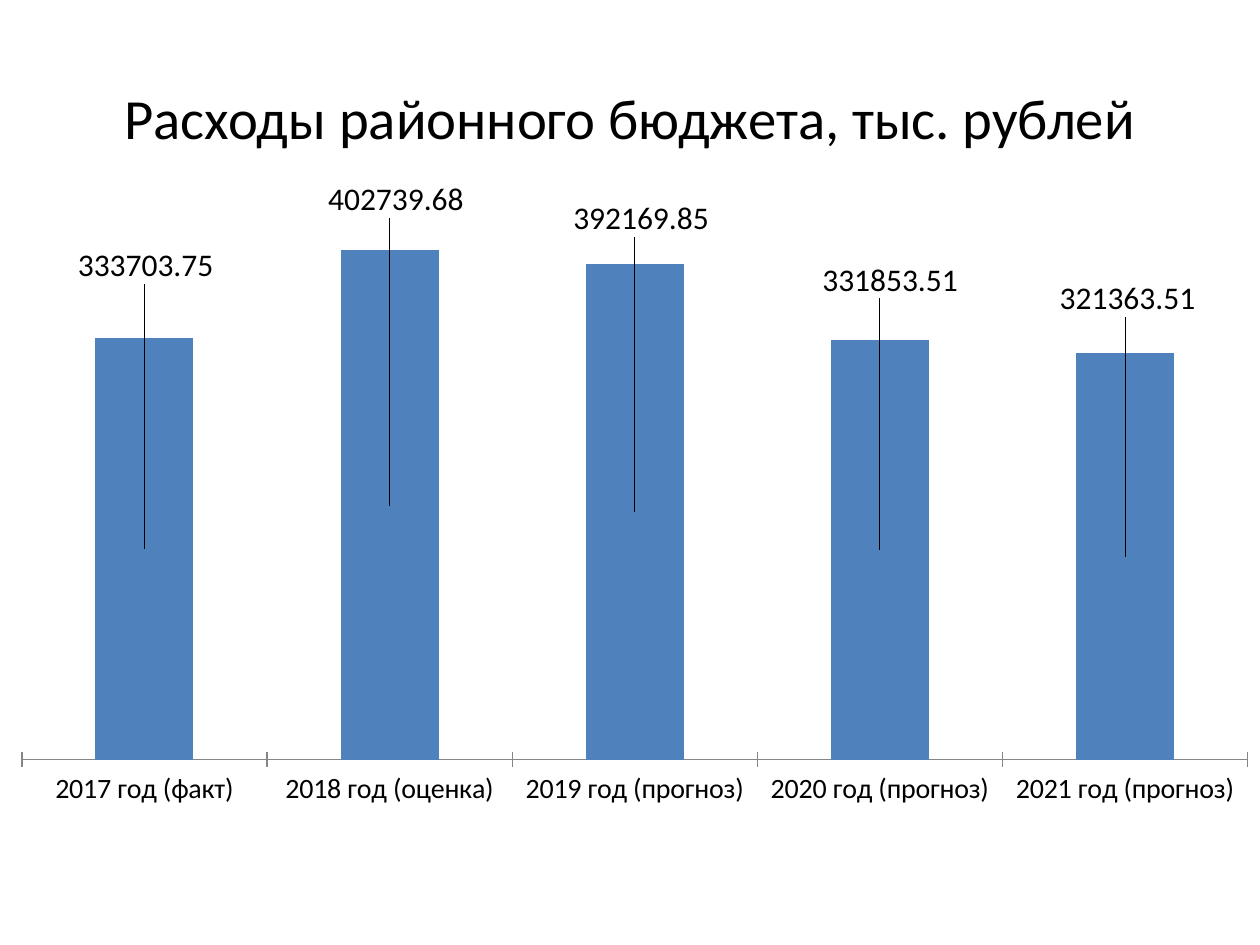
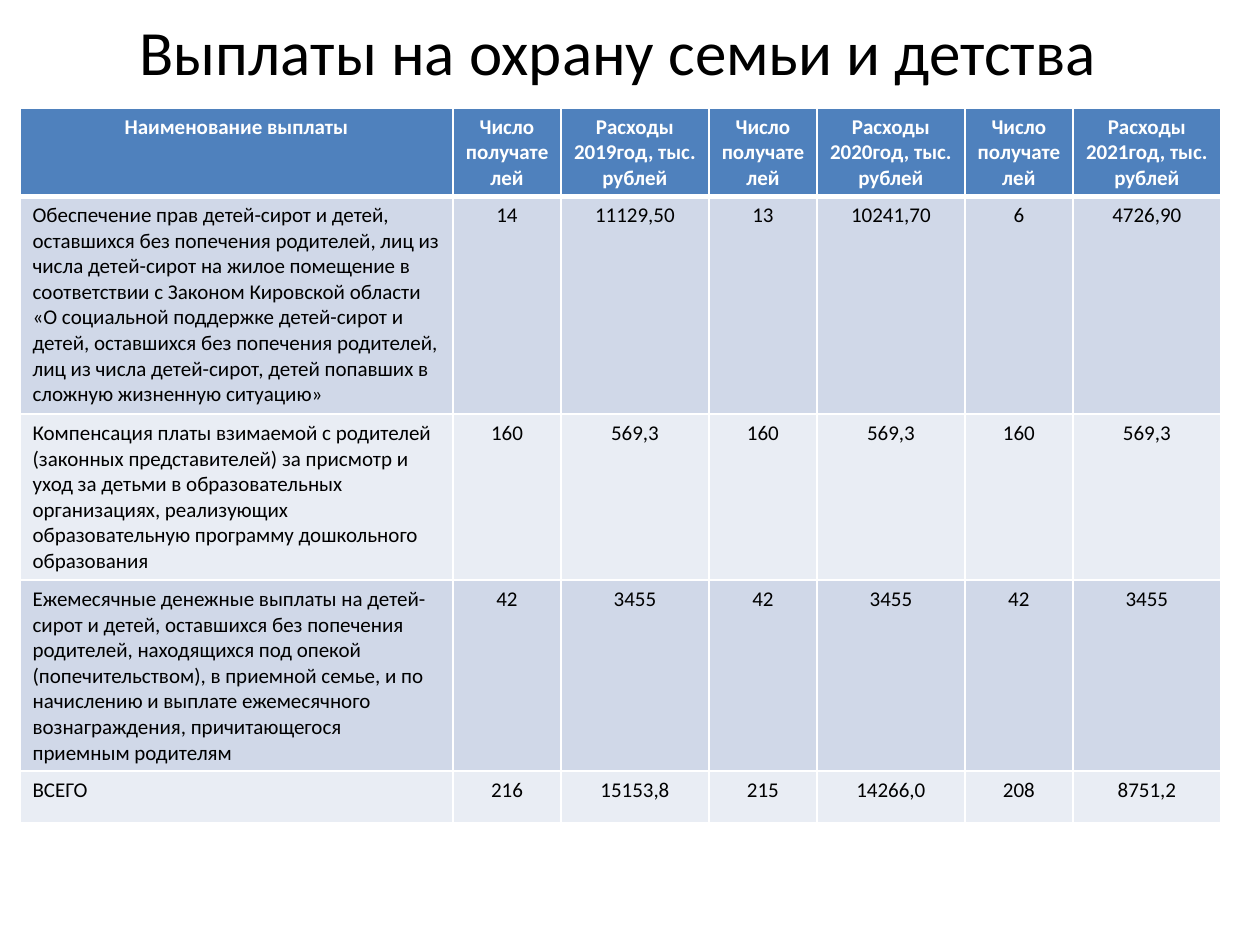
"""Two budget slides: spending by year as a column chart, and family payments as a table."""
from lxml.etree import SubElement
from pptx import Presentation
from pptx.chart.data import CategoryChartData
from pptx.dml.color import RGBColor
from pptx.enum.chart import XL_CHART_TYPE as ChartType, XL_LABEL_POSITION as LabelPos
from pptx.enum.chart import XL_TICK_LABEL_POSITION as TickLabels, XL_TICK_MARK as TickMark
from pptx.enum.text import MSO_ANCHOR as Anchor, PP_ALIGN as Align
from pptx.oxml import parse_xml
from pptx.oxml.ns import nsdecls, qn
from pptx.util import Emu, Pt

FONT = "Calibri"
COLORS = {"text": "000000", "paper": "FFFFFF", "accent": "4F81BD",
          "band_dark": "D0D8E8", "band_light": "E9EDF4", "axis": "868686"}
SLIDE = (1260, 945)

SPENDING_TITLE = ("Расходы районного бюджета, тыс. рублей", (63, 38, 1134, 158), 32.4)
SPENDING_BOX = (0, 147, 1289, 767)
SPENDING_PLOT = {"x": 0.017, "y": 0.057, "w": 0.951, "h": 0.742}
# year, amount, label shift from the middle of its column in px
SPENDING = [
    ("2017 год (факт)", 333703.75, (1, -283)),
    ("2018 год (оценка)", 402739.68, (7, -306)),
    ("2019 год (прогноз)", 392169.85, (7, -293)),
    ("2020 год (прогноз)", 331853.51, (10, -270)),
    ("2021 год (прогноз)", 321363.51, (2, -258)),
]

PAYMENTS_TITLE = ("Выплаты на охрану семьи и детства", (39, 0, 1158, 100), 36)
PAYMENTS_ORIGIN = (20, 108)
PAYMENTS_COLUMNS = [433] + [108, 148] * 3
PAYMENTS_ROWS = [88, 218, 166, 191, 52]
HEADER = ["Наименование выплаты"]
for year in (2019, 2020, 2021):
    HEADER += ["Число получателей", f"Расходы {year}год, тыс. рублей"]
PAYMENTS = [
    HEADER,
    ["Обеспечение прав детей-сирот и детей, оставшихся без попечения родителей, лиц из числа "
     "детей-сирот на жилое помещение в соответствии с Законом Кировской области «О социальной "
     "поддержке детей-сирот и детей, оставшихся без попечения родителей, лиц из числа "
     "детей-сирот, детей попавших в сложную жизненную ситуацию»",
     "14", "11129,50", "13", "10241,70", "6", "4726,90"],
    ["Компенсация платы взимаемой с родителей (законных представителей) за присмотр и уход за "
     "детьми в образовательных организациях, реализующих образовательную программу "
     "дошкольного образования"] + ["160", "569,3"] * 3,
    ["Ежемесячные денежные выплаты на детей-сирот и детей, оставшихся без попечения родителей, "
     "находящихся под опекой (попечительством), в приемной семье, и по начислению и выплате "
     "ежемесячного вознаграждения, причитающегося приемным родителям"] + ["42", "3455"] * 3,
    ["ВСЕГО", "216", "15153,8", "215", "14266,0", "208", "8751,2"],
]


def px(length):
    return Emu(round(length * 914400 / 126))


def rgb(name):
    return RGBColor.from_string(COLORS[name])


def style_font(font, size, color="text", bold=False):
    font.name, font.size, font.bold = FONT, Pt(size), bold
    font.color.rgb = rgb(color)


def add_title(slide, words, box, size):
    frame = slide.shapes.add_textbox(*map(px, box)).text_frame
    frame.word_wrap = True
    frame.vertical_anchor = Anchor.MIDDLE
    frame.text = words
    heading = frame.paragraphs[0]
    heading.alignment = Align.CENTER
    style_font(heading.runs[0].font, size)


def manual_layout(places, inner=False):
    tags = '<c:layoutTarget val="inner"/>' if inner else ""
    if inner:
        tags += '<c:xMode val="edge"/><c:yMode val="edge"/>'
    tags += "".join(f'<c:{key} val="{value:.3f}"/>' for key, value in places.items())
    return parse_xml(f'<c:layout {nsdecls("c")}><c:manualLayout>{tags}</c:manualLayout></c:layout>')


def add_spending_chart(slide):
    years, amounts, shifts = zip(*SPENDING)
    spending = CategoryChartData()
    spending.categories = years
    spending.add_series("Series 1", amounts)
    chart = slide.shapes.add_chart(
        ChartType.COLUMN_STACKED, *map(px, SPENDING_BOX), spending).chart
    chart.has_legend = chart.has_title = False
    style_font(chart.font, 18)

    amount_axis, year_axis = chart.value_axis, chart.category_axis
    amount_axis.minimum_scale, amount_axis.maximum_scale = 0, 450000
    amount_axis.has_major_gridlines = False
    amount_axis.visible = False
    year_axis.major_tick_mark = TickMark.CROSS
    year_axis.tick_label_position = TickLabels.NEXT_TO_AXIS
    year_axis.format.line.color.rgb = rgb("axis")
    style_font(year_axis.tick_labels.font, 16)

    plot = chart.plots[0]
    plot.gap_width, plot.overlap, plot.vary_by_categories = 150, 100, False
    columns = plot.series[0]
    columns.format.fill.solid()
    columns.format.fill.fore_color.rgb = rgb("accent")
    columns.data_labels.show_value = True
    style_font(columns.data_labels.font, 18)
    for index in range(len(years)):
        label = columns.points[index].data_label
        label.position = LabelPos.CENTER
        style_font(label.font, 18)
    for label, (right, down) in zip(columns.data_labels._element.findall(qn("c:dLbl")), shifts):
        shift = {"x": right / SPENDING_BOX[2], "y": down / SPENDING_BOX[3]}
        label.find(qn("c:idx")).addnext(manual_layout(shift))

    area = chart._chartSpace.chart.plotArea
    for layout in area.findall(qn("c:layout")):
        area.remove(layout)
    area.insert(0, manual_layout(SPENDING_PLOT, inner=True))


def add_borders(cell, widths):
    properties = cell._tc.get_or_add_tcPr()
    for place, (side, width) in enumerate(widths.items()):
        border = parse_xml(
            f'<a:{side} {nsdecls("a")} w="{Pt(width)}"><a:solidFill/></a:{side}>')
        SubElement(border[0], qn("a:srgbClr")).set("val", COLORS["paper"])
        properties.insert(place, border)


def add_payments_table(slide):
    size = (sum(PAYMENTS_COLUMNS), sum(PAYMENTS_ROWS))
    table = slide.shapes.add_table(
        len(PAYMENTS_ROWS), len(PAYMENTS_COLUMNS), *map(px, PAYMENTS_ORIGIN + size)).table
    for column, width in zip(table.columns, PAYMENTS_COLUMNS):
        column.width = px(width)
    for row, height in zip(table.rows, PAYMENTS_ROWS):
        row.height = px(height)
    for r, payment in enumerate(PAYMENTS):
        is_header = r == 0
        band = "accent" if is_header else "band_dark" if r % 2 else "band_light"
        for c, words in enumerate(payment):
            cell = table.cell(r, c)
            cell.fill.solid()
            cell.fill.fore_color.rgb = rgb(band)
            cell.text_frame.text = words
            entry = cell.text_frame.paragraphs[0]
            entry.alignment = Align.CENTER if is_header or c else Align.LEFT
            style_font(entry.runs[0].font, 12, "paper" if is_header else "text", is_header)
            add_borders(cell, {"lnL": 1, "lnR": 1, "lnT": 3 if r == 1 else 1,
                               "lnB": 3 if is_header else 1})


def main():
    deck = Presentation()
    deck.slide_width, deck.slide_height = map(px, SLIDE)
    for title, add_content in ((SPENDING_TITLE, add_spending_chart),
                               (PAYMENTS_TITLE, add_payments_table)):
        slide = deck.slides.add_slide(deck.slide_layouts[6])
        add_title(slide, *title)
        add_content(slide)
    deck.save("out.pptx")


if __name__ == "__main__":
    main()
